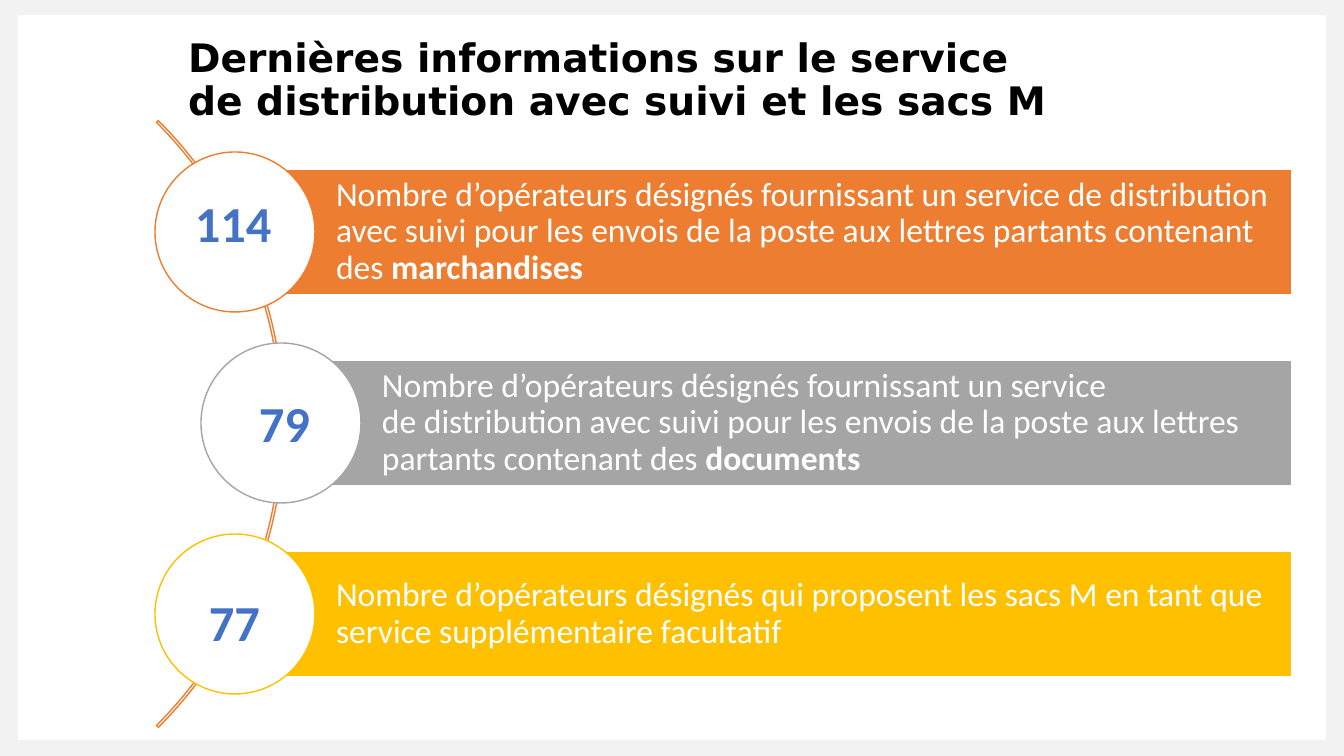
import dataclasses

import pptx
import pptx.dml.color
import pptx.enum.shapes
import pptx.enum.text
import pptx.util

SHAPE = pptx.enum.shapes.MSO_SHAPE
ALIGN = pptx.enum.text.PP_ALIGN
ANCHOR = pptx.enum.text.MSO_ANCHOR
FIT = pptx.enum.text.MSO_AUTO_SIZE

SCALE = 914400 / 100.8  # EMU per px
WIDE, HIGH = 1344, 756
RIGHT = 1292  # shared right edge of the bars
FIRST, STEP = 232, 191  # middle of the first row, distance between rows
BAR, DISC = 126, 160  # bar height, circle diameter


@dataclasses.dataclass
class Row:
    left: int
    color: str
    text: str
    bold: str
    count: str
    spot: tuple[int, int]
    align: ALIGN


ROWS = [
    Row(235, "ED7D31",
        "Nombre d’opérateurs désignés fournissant un service de distribution "
        "avec suivi pour les envois de la poste aux lettres partants contenant des ",
        "marchandises", "114", (185, 187), ALIGN.LEFT),
    Row(281, "A5A5A5",
        "Nombre d’opérateurs désignés fournissant un service \n"
        "de distribution avec suivi pour les envois de la poste aux lettres "
        "partants contenant des ",
        "documents", "79", (229, 387), ALIGN.CENTER),
    Row(235, "FFC000",
        "Nombre d’opérateurs désignés qui proposent les sacs M en tant que "
        "service supplémentaire facultatif",
        "", "77", (179, 586), ALIGN.CENTER),
]


def px(size: int) -> pptx.util.Emu:
    return pptx.util.Emu(round(size * SCALE))


def rgb(color: str) -> pptx.dml.color.RGBColor:
    return pptx.dml.color.RGBColor.from_string(color)


def draw(slide, kind: SHAPE, left: int, top: int, width: int, height: int,
         fill: str = "", line: str = ""):
    shape = slide.shapes.add_shape(kind, px(left), px(top), px(width), px(height))
    shape.shadow.inherit = False
    if fill:
        shape.fill.solid()
        shape.fill.fore_color.rgb = rgb(fill)
    else:
        shape.fill.background()
    if line:
        shape.line.color.rgb = rgb(line)
        shape.line.width = pptx.util.Pt(1)
    else:
        shape.line.fill.background()
    return shape


def style(para, name: str, size: int, color: str, align: ALIGN,
          bold: bool | None = None) -> None:
    para.alignment = align
    para.font.name = name
    para.font.size = pptx.util.Pt(size)
    para.font.color.rgb = rgb(color)
    para.font.bold = bold


def head(slide) -> None:
    title = slide.shapes.title
    slide.shapes._spTree.append(title._element)  # bring in front of the panel
    title.left, title.top, title.width, title.height = map(px, (178, 34, 1076, 96))
    frame = title.text_frame
    frame.auto_size = FIT.NONE
    frame.word_wrap = True
    frame.vertical_anchor = ANCHOR.TOP
    para = frame.paragraphs[0]
    para.text = ("Dernières informations sur le service \n"
                 "de distribution avec suivi et les sacs M")
    para.line_spacing = 0.9
    style(para, "DejaVu Sans", 28, "000000", ALIGN.LEFT, True)


def band(slide, row: Row, mid: int) -> None:
    bar = draw(slide, SHAPE.RECTANGLE, row.left, mid - BAR // 2,
               RIGHT - row.left, BAR, row.color, "FFFFFF")
    frame = bar.text_frame
    frame.word_wrap = True
    frame.vertical_anchor = ANCHOR.MIDDLE
    frame.margin_left = px(101)
    frame.margin_top = frame.margin_right = frame.margin_bottom = px(7)
    para = frame.paragraphs[0]
    para.text = row.text
    para.line_spacing = 0.9
    style(para, "Calibri", 24, "FFFFFF", ALIGN.LEFT)
    if row.bold:
        run = para.add_run()
        run.text = row.bold
        run.font.bold = True
    draw(slide, SHAPE.OVAL, row.left - DISC // 2, mid - DISC // 2,
         DISC, DISC, "FFFFFF", row.color)


def tally(slide, row: Row) -> None:
    box = slide.shapes.add_textbox(*map(px, (*row.spot, 111, 72)))
    box.text_frame.word_wrap = True
    para = box.text_frame.paragraphs[0]
    para.text = row.count
    style(para, "Calibri", 36, "4472C4", row.align, True)


def main() -> None:
    deck = pptx.Presentation()
    deck.slide_width, deck.slide_height = px(WIDE), px(HIGH)
    slide = deck.slides.add_slide(deck.slide_layouts.get_by_name("Title Only"))

    # Grey frame around a white panel
    draw(slide, SHAPE.RECTANGLE, 0, 0, WIDE, HIGH, "F2F2F2")
    draw(slide, SHAPE.RECTANGLE, 18, 15, 1308, 725, "FFFFFF")
    head(slide)

    # Thin arc from 315 to 45 degrees, in units of 100000/60000 degree
    arc = draw(slide, SHAPE.BLOCK_ARC, -574, -5, 858, 858, line="ED7D31")
    for index, value in enumerate((315 * 0.6, 45 * 0.6, 3 / 1000)):
        arc.adjustments[index] = value

    # Bars and circles, then the counts
    for index, row in enumerate(ROWS):
        band(slide, row, FIRST + index * STEP)
    for row in ROWS:
        tally(slide, row)

    deck.save("out.pptx")


if __name__ == "__main__":
    main()
